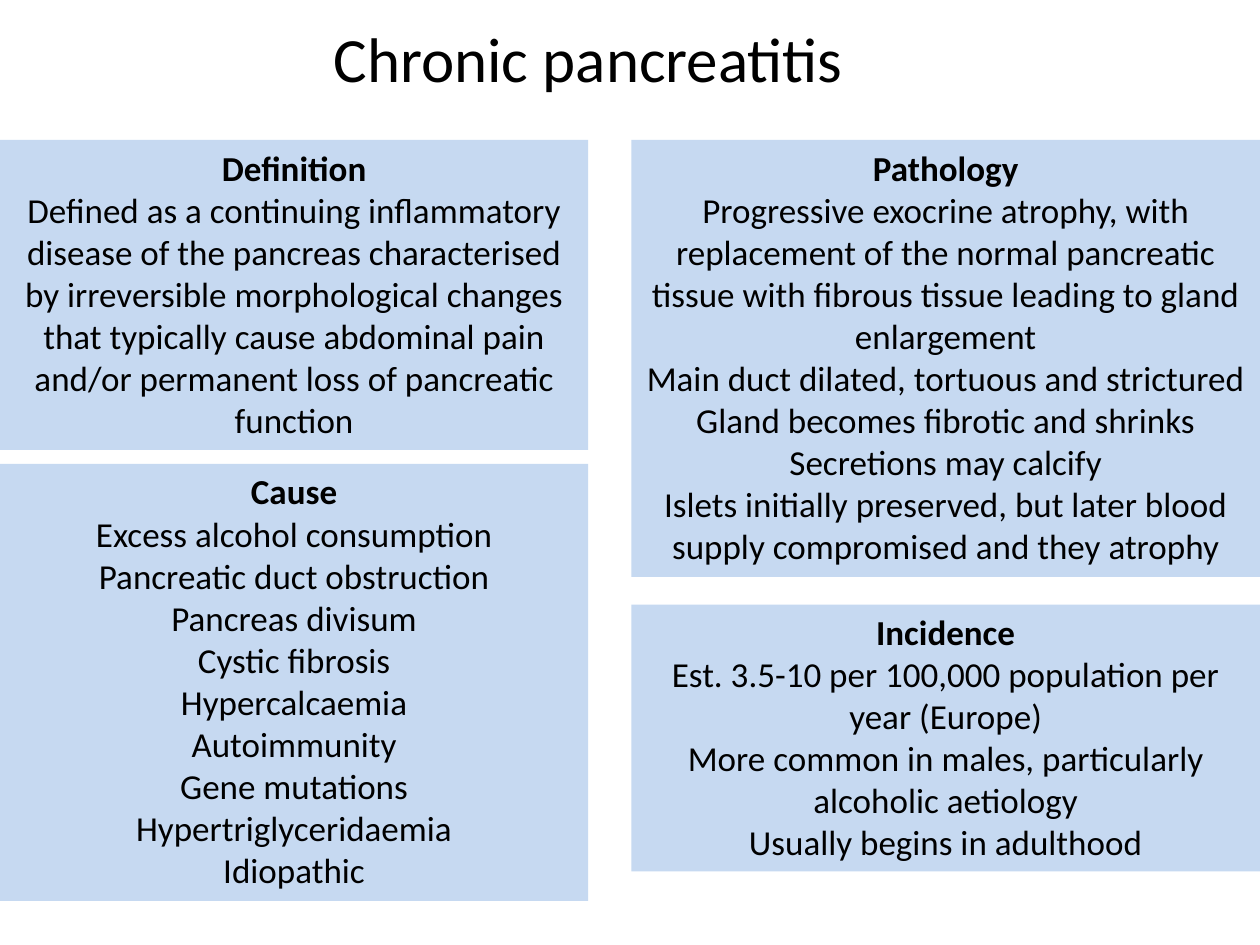
from pptx import Presentation
from pptx.dml.color import RGBColor
from pptx.enum.shapes import MSO_SHAPE
from pptx.enum.text import MSO_ANCHOR, MSO_AUTO_SIZE, PP_ALIGN
from pptx.util import Cm, Pt

BLACK = RGBColor(0x00, 0x00, 0x00)
BLUE = RGBColor(0xC6, 0xD9, 0xF1)

# Columns as (left, width), in cm
LEFT = (0, 11.86)
RIGHT = (12.73, 12.67)
TOP = 2.82


class Board:
    """Holds the text style and the current slide."""

    font = {"name": "Calibri", "bold": False}

    def __init__(self, slide):
        self.slide = slide

    def label(self, shape, lines, frame, **font):
        body = shape.text_frame
        for key, value in {"word_wrap": True, **frame}.items():
            setattr(body, key, value)
        body.text = "\n".join(lines)
        for para in body.paragraphs:
            para.alignment = PP_ALIGN.CENTER
            for key, value in {**self.font, **font}.items():
                setattr(para.font, key, value)
            para.font.color.rgb = BLACK
        return body

    def title(self, text, *area):
        box = self.slide.shapes.add_textbox(*map(Cm, area))
        self.label(box, [text], {"vertical_anchor": MSO_ANCHOR.MIDDLE}, size=Pt(36))

    def panel(self, column, top, height, head, *lines):
        left, width = column
        area = map(Cm, (left, top, width, height))
        box = self.slide.shapes.add_shape(MSO_SHAPE.RECTANGLE, *area)
        box.shadow.inherit = False
        box.fill.solid()
        box.fill.fore_color.rgb = BLUE
        box.line.fill.background()
        frame = {
            "vertical_anchor": MSO_ANCHOR.TOP,
            "auto_size": MSO_AUTO_SIZE.SHAPE_TO_FIT_TEXT,
        }
        body = self.label(box, [head, *lines], frame, size=Pt(20))
        body.paragraphs[0].font.bold = True


def main():
    deck = Presentation()
    deck.slide_width, deck.slide_height = Cm(25.4), Cm(19.05)
    board = Board(deck.slides.add_slide(deck.slide_layouts[6]))

    # Title
    board.title("Chronic pancreatitis", 0.43, 0.03, 22.86, 2.26)

    # Left column
    board.panel(
        LEFT, TOP, 6.25, "Definition",
        "Defined as a continuing inflammatory disease of the pancreas "
        "characterised by irreversible morphological changes that typically "
        "cause abdominal pain and/or permanent loss of pancreatic function",
    )
    board.panel(
        LEFT, 9.35, 8.81, "Cause",
        "Excess alcohol consumption",
        "Pancreatic duct obstruction",
        "Pancreas divisum",
        "Cystic fibrosis",
        "Hypercalcaemia",
        "Autoimmunity",
        "Gene mutations",
        "Hypertriglyceridaemia",
        "Idiopathic",
    )

    # Right column
    board.panel(
        RIGHT, TOP, 8.81, "Pathology",
        "Progressive exocrine atrophy, with replacement of the normal "
        "pancreatic tissue with fibrous tissue leading to gland enlargement",
        "Main duct dilated, tortuous and strictured",
        "Gland becomes fibrotic and shrinks",
        "Secretions may calcify",
        "Islets initially preserved, but later blood supply compromised "
        "and they atrophy",
    )
    board.panel(
        RIGHT, 12.19, 5.38, "Incidence",
        "Est. 3.5-10 per 100,000 population per year (Europe)",
        "More common in males, particularly alcoholic aetiology",
        "Usually begins in adulthood",
    )

    deck.save("out.pptx")


if __name__ == "__main__":
    main()
